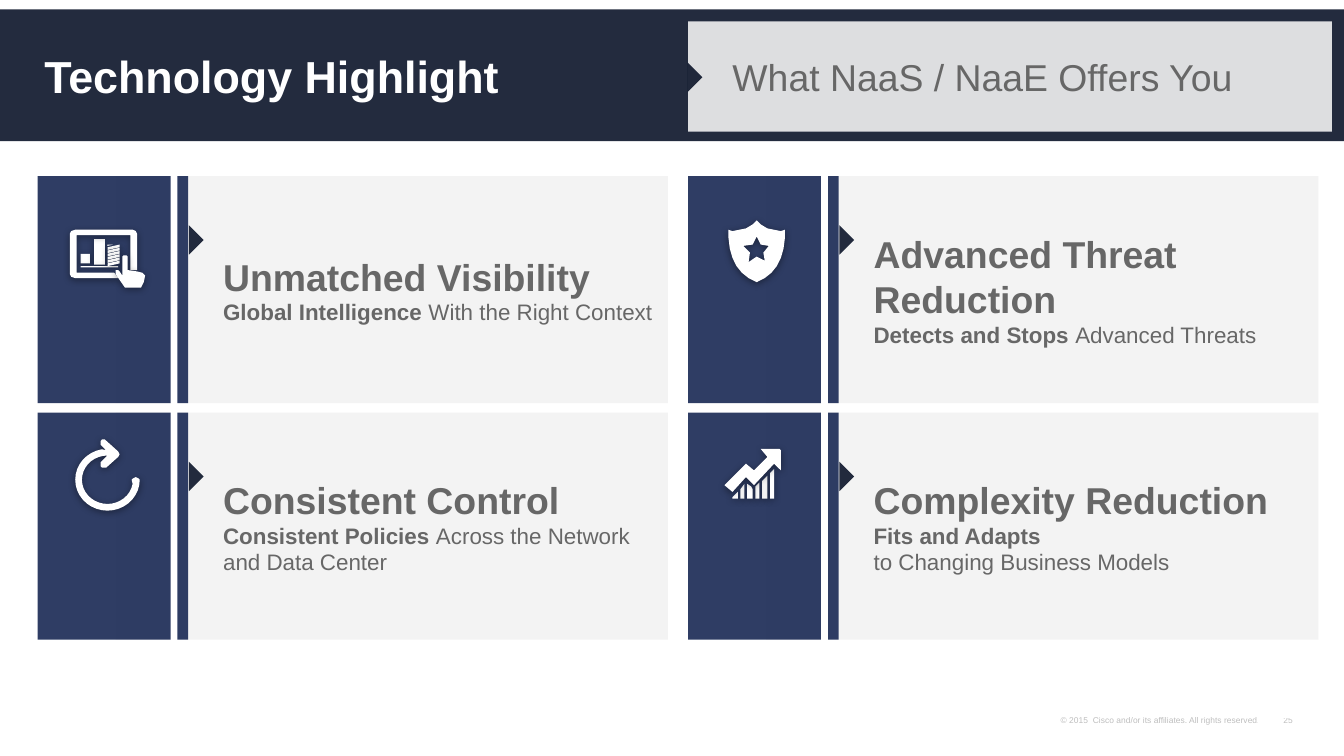
from dataclasses import dataclass
from copy import deepcopy
from math import cos, radians, sin

from lxml.etree import SubElement
from pptx import Presentation
from pptx.dml.color import RGBColor
from pptx.enum.shapes import MSO_SHAPE as Preset
from pptx.enum.text import MSO_ANCHOR as Anchor, MSO_AUTO_SIZE as AutoSize, PP_ALIGN as Align
from pptx.oxml.ns import qn
from pptx.util import Inches, Pt


@dataclass(frozen=True)
class Theme:
    font: str = "Arial"
    dark: str = "0C152A"
    navy: str = "192954"
    pale: str = "F2F2F2"
    grey: str = "676767"
    white: str = "FFFFFF"
    black: str = "000000"
    title: float = 24
    heading: float = 20
    body: float = 12
    footer: float = 4.5


THEME = Theme()
COLUMN_STEP, ROW_STEP = 4.84, 1.76
CARDS = [
    [("Unmatched Visibility", "Global Intelligence ", "With the Right Context"),
     ("Consistent Control", "Consistent Policies ", "Across the Network and Data Center")],
    [("Advanced Threat Reduction", "Detects and Stops ", "Advanced Threats"),
     ("Complexity Reduction", "Fits and Adapts \n", "to Changing Business Models")],
]

TABLET_FRAME = [
    (1.02, 1.74), (1.01, 1.72), (0.99, 1.71), (0.56, 1.71), (0.53, 1.72), (0.52, 1.74),
    (0.52, 2.04), (0.53, 2.06), (0.56, 2.07), (0.88, 2.07), (0.85, 2.03), (0.57, 2.03),
    (0.57, 1.75), (0.97, 1.75), (0.97, 2.01), (1.02, 2.01)]
HAND = [
    (0.95, 2.01), (0.95, 1.91), (0.94, 1.9), (0.92, 1.9), (0.91, 1.91), (0.91, 2.05),
    (0.89, 2.02), (0.88, 2.01), (0.86, 2.01), (0.86, 2.04), (0.93, 2.14), (1.05, 2.14),
    (1.07, 2.1), (1.08, 2.05), (1.06, 2.03), (1.02, 2.02)]
ARROW_HEAD = [
    (0.79, 3.35), (0.75, 3.31), (0.75, 3.28), (0.76, 3.27), (0.78, 3.27), (0.88, 3.36),
    (0.89, 3.38), (0.88, 3.4), (0.79, 3.48), (0.76, 3.48), (0.75, 3.47), (0.75, 3.44)]
ARROW_TIP = [(0.98, 3.57), (0.99, 3.56), (1.01, 3.55), (1.03, 3.56), (1.04, 3.57)]
SHIELD_CENTER = 5.63
SHIELD_HALF = [
    (0, 1.64), (0.03, 1.67), (0.08, 1.7), (0.13, 1.71), (0.18, 1.72), (0.21, 1.71),
    (0.21, 1.77), (0.2, 1.85), (0.18, 1.92), (0.15, 1.98), (0.11, 2.03), (0.06, 2.07), (0, 2.1)]
STAR = [
    (5.69, 1.94), (5.63, 1.91), (5.57, 1.95), (5.58, 1.88), (5.53, 1.83),
    (5.6, 1.82), (5.63, 1.76), (5.66, 1.82), (5.72, 1.83), (5.68, 1.88)]
TREND_BARS = [
    [(5.51, 3.64), (5.54, 3.6)],
    [(5.67, 3.58), (5.71, 3.54)],
    [(5.73, 3.52), (5.76, 3.49)],
    [(5.62, 3.62), (5.65, 3.59)],
    [(5.56, 3.6), (5.59, 3.62), (5.6, 3.64)],
    [(5.45, 3.7), (5.47, 3.68), (5.49, 3.66)]]
TREND_ARROW = [
    (5.8, 3.34), (5.66, 3.34), (5.71, 3.4), (5.61, 3.5), (5.55, 3.45), (5.39, 3.61),
    (5.45, 3.66), (5.55, 3.55), (5.61, 3.61), (5.76, 3.45), (5.81, 3.5), (5.81, 3.35)]


def set_opacity(element, percent):
    color = element.find(".//" + qn("a:srgbClr"))
    SubElement(color, qn("a:alpha"), val=str(percent * 1000))


def paint(shape, color, opacity=100, glow=False):
    shape.shadow.inherit = False
    shape.fill.solid()
    shape.fill.fore_color.rgb = RGBColor.from_string(color)
    shape.line.fill.background()
    properties = shape._element.spPr
    if opacity < 100:
        set_opacity(properties, opacity)
    if glow:
        effects = properties.find(qn("a:effectLst"))
        shadow = SubElement(effects, qn("a:outerShdw"), blurRad=str(Pt(4)), dist=str(Pt(1)),
                            dir="5400000", algn="t", rotWithShape="0")
        SubElement(shadow, qn("a:srgbClr"), val=THEME.black)
        set_opacity(shadow, 40)


def add_block(shapes, left, top, width, height, color, preset=Preset.RECTANGLE, **style):
    block = shapes.add_shape(preset, Inches(left), Inches(top), Inches(width), Inches(height))
    paint(block, color, **style)
    return block


def add_pointer(page, left, top):
    pointer = add_block(page.shapes, left, top, 0.22, 0.11, THEME.dark,
                        Preset.ISOSCELES_TRIANGLE, opacity=90)
    pointer.rotation = 90


def add_outline(shapes, *contours):
    first, *others = [[(Inches(x), Inches(y)) for x, y in contour] for contour in contours]
    builder = shapes.build_freeform(*first[0])
    builder.add_line_segments(first[1:], close=True)
    for contour in others:
        builder.move_to(*contour[0])
        builder.add_line_segments(contour[1:], close=True)
    paint(builder.convert_to_shape(), THEME.white, glow=True)


def add_span(para, text, size, color, bold=False, opacity=100):
    span = para.add_run()
    span.text = text.rstrip("\n")
    span.font.name = THEME.font
    span.font.size = Pt(size)
    span.font.bold = bold
    span.font.color.rgb = RGBColor.from_string(color)
    if opacity < 100:
        set_opacity(span._r, opacity)
    if text.endswith("\n"):
        para.add_line_break()
        para._p[-1].append(deepcopy(span._r.rPr))


def set_frame(box, insets, anchor=Anchor.MIDDLE, align=Align.LEFT, wrap=True):
    frame = box.text_frame
    frame.word_wrap = wrap
    frame.vertical_anchor = anchor
    (frame.margin_left, frame.margin_top,
     frame.margin_right, frame.margin_bottom) = [Inches(inset) for inset in insets]
    frame.paragraphs[0].alignment = align
    return frame


def add_footer(page, text, left, width, wrap):
    box = page.shapes.add_textbox(Inches(left), Inches(5.3), Inches(width), Inches(0.13))
    frame = set_frame(box, (0.05, 0.03, 0.05, 0.03), Anchor.BOTTOM, Align.RIGHT, wrap)
    frame.auto_size = AutoSize.SHAPE_TO_FIT_TEXT
    add_span(frame.paragraphs[0], text, THEME.footer, THEME.black, opacity=25)


def add_banner(page, text, left, top, width, height, fill, **style):
    box = add_block(page.shapes, left, top, width, height, fill, opacity=90)
    frame = set_frame(box, (0.33, 0.07, 0.13, 0.07))
    add_span(frame.paragraphs[0], text, **style)


def add_card(page, column, row, heading, lead, rest):
    left, top = column * COLUMN_STEP, 1.31 + row * ROW_STEP
    panel = add_block(page.shapes, left + 0.86, top, 4.11, 1.69, THEME.pale, opacity=90)
    frame = set_frame(panel, (0.8, 0.05, 0.1, 0.05))
    add_span(frame.paragraphs[0], heading, THEME.heading, THEME.grey, bold=True)
    para = frame.add_paragraph()
    para.alignment = Align.LEFT
    add_span(para, lead, THEME.body, THEME.grey, bold=True)
    add_span(para, rest, THEME.body, THEME.grey)
    add_block(page.shapes, left + 0.28, top, 1.12, 1.69, THEME.navy, opacity=90)
    add_pointer(page, left + 1.35, top + 0.42)


def add_tablet_icon(page):
    shapes = page.shapes.add_group_shape().shapes
    for bounds in [(0.6, 1.89, 0.07, 0.07), (0.7, 1.78, 0.08, 0.19), (0.6, 1.98, 0.28, 0.01)]:
        add_block(shapes, *bounds, THEME.white, glow=True)
    for index in range(6):
        top = 1.82 + index * 0.024
        add_outline(shapes, [(0.89, top), (0.8, top + 0.02), (0.8, top + 0.04), (0.89, top + 0.02)])
    add_outline(shapes, [(0.8, 1.82), (0.8, 1.83), (0.84, 1.82)])
    add_outline(shapes, TABLET_FRAME)
    add_outline(shapes, HAND)


def add_refresh_icon(page):
    def arc(across, down, start, end, step):
        return [(0.8 + across * cos(radians(angle)), 3.57 + down * sin(radians(angle)))
                for angle in range(start, end, step)]

    inner = arc(0.19, 0.18, 270, 0, -10)
    outer = arc(0.24, 0.23, 10, 270, 10)
    add_outline(page.shapes, ARROW_HEAD + inner + ARROW_TIP + outer)


def add_shield_icon(page):
    right = [(SHIELD_CENTER + x, y) for x, y in SHIELD_HALF]
    left = [(SHIELD_CENTER - x, y) for x, y in SHIELD_HALF[-2:0:-1]]
    add_outline(page.shapes, right + left, STAR)


def add_trend_icon(page):
    shapes = page.shapes.add_group_shape().shapes
    for tops in TREND_BARS:
        add_outline(shapes, tops + [(tops[-1][0], 3.71), (tops[0][0], 3.71)])
    add_outline(shapes, TREND_ARROW)


def main():
    deck = Presentation()
    deck.slide_width, deck.slide_height = Inches(10), Inches(10) * 9 // 16
    page = deck.slides.add_slide(deck.slide_layouts[6])
    add_footer(page, "25", 9.49, 0.18, wrap=False)
    add_footer(page, "© 2015  Cisco and/or its affiliates. All rights reserved. ", 6.53, 2.91, wrap=True)
    add_banner(page, "Technology Highlight", 0, 0.07, 10, 0.98, THEME.dark,
               size=THEME.title, color=THEME.white, bold=True)
    add_banner(page, "What NaaS / NaaE Offers You", 5.12, 0.16, 4.79, 0.82, THEME.pale,
               size=THEME.heading, color=THEME.grey)
    add_pointer(page, 5.06, 0.52)
    icons = [(add_tablet_icon, add_refresh_icon), (add_shield_icon, add_trend_icon)]
    for column, cards in enumerate(CARDS):
        for row, texts in enumerate(cards):
            add_card(page, column, row, *texts)
        add_block(page.shapes, 1.27 + column * COLUMN_STEP, 1.21, 0.05, 3.66, THEME.white)
        for add_icon in icons[column]:
            add_icon(page)
    deck.save("out.pptx")


if __name__ == "__main__":
    main()
